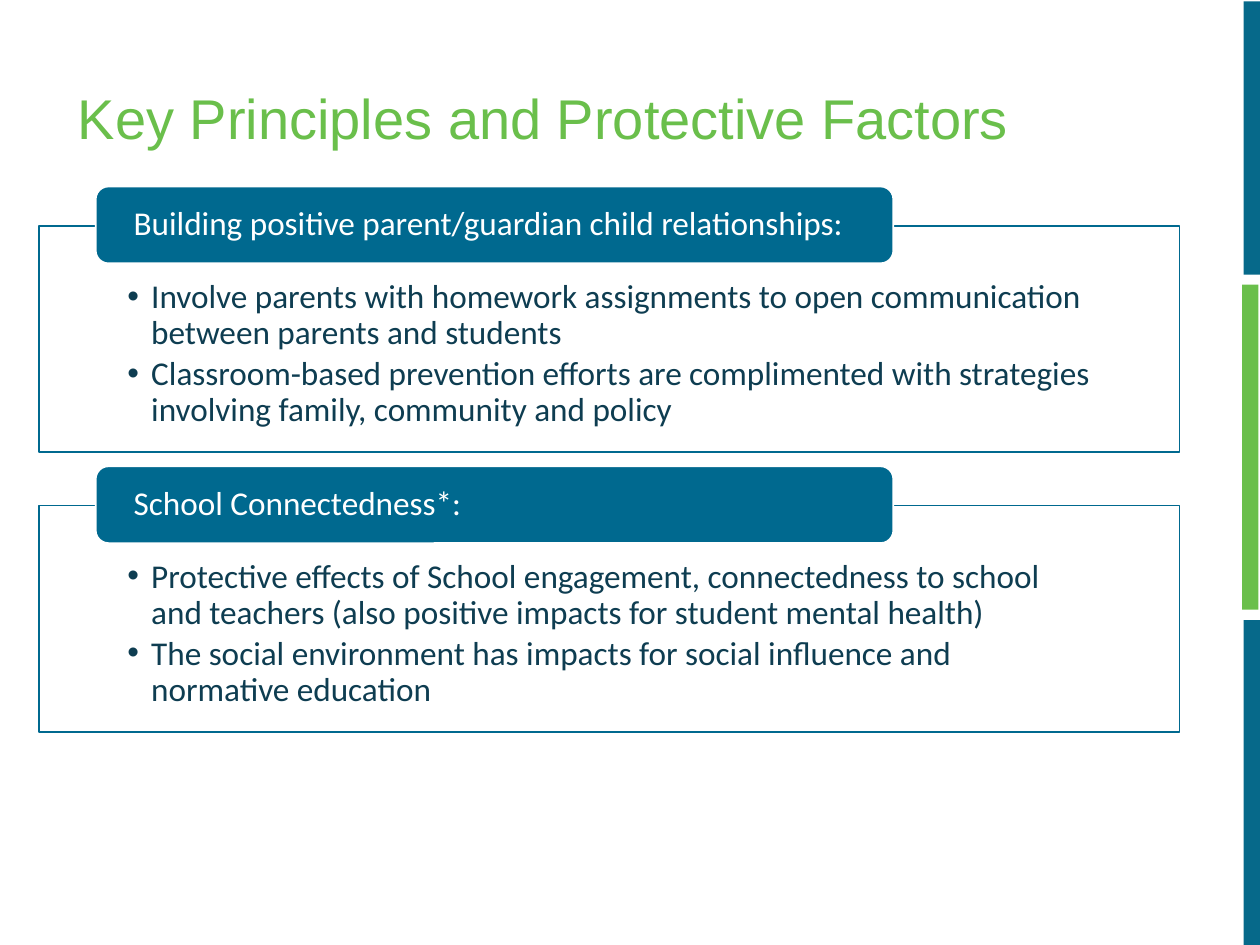
from dataclasses import dataclass

from lxml.etree import SubElement
from pptx import Presentation
from pptx.dml.color import RGBColor
from pptx.enum.shapes import MSO_SHAPE
from pptx.enum.text import MSO_ANCHOR, PP_ALIGN
from pptx.oxml.ns import qn
from pptx.shapes.autoshape import Shape
from pptx.slide import Slide
from pptx.text.text import _Paragraph as Paragraph
from pptx.util import Cm, Pt

COLORS = {
    "bar_blue": "06698A",
    "green": "6ABF4B",
    "blue": "00698F",
    "ink": "0E3D51",
    "white": "FFFFFF",
}
PANEL_TOP = 4.55
PANEL_PITCH = 5.64
HEADER_RISE = 0.79
BULLET_INDENT = Cm(0.48)


@dataclass
class Frame:
    left: float
    top: float
    width: float
    height: float


@dataclass
class Bar:
    frame: Frame
    color: str


@dataclass
class Topic:
    heading: str
    points: list[str]


BARS = [
    Bar(Frame(25.07, 12.5, 0.33, 6.55), "bar_blue"),
    Bar(Frame(25.04, 5.74, 0.33, 6.55), "green"),
    Bar(Frame(25.07, 0.03, 0.33, 5.51), "bar_blue"),
]
TOPICS = [
    Topic(
        "Building positive parent/guardian child relationships:",
        [
            "Involve parents with homework assignments to open communication between parents and students",
            "Classroom-based prevention efforts are complimented with strategies involving family, community and policy",
        ],
    ),
    Topic(
        "School Connectedness*:",
        [
            "Protective effects of School engagement, connectedness to school and teachers (also positive impacts for student mental health)",
            "The social environment has impacts for social influence and normative education",
        ],
    ),
]


def color_of(name: str) -> RGBColor:
    return RGBColor.from_string(COLORS[name])


def lengths(frame: Frame) -> tuple[Cm, Cm, Cm, Cm]:
    return Cm(frame.left), Cm(frame.top), Cm(frame.width), Cm(frame.height)


def add_block(page: Slide, kind: MSO_SHAPE, frame: Frame, fill: str, line: str | None = None) -> Shape:
    block = page.shapes.add_shape(kind, *lengths(frame))
    block.shadow.inherit = False
    block.fill.solid()
    block.fill.fore_color.rgb = color_of(fill)
    if line:
        block.line.color.rgb = color_of(line)
        block.line.width = Pt(1)
    else:
        block.line.fill.background()
    return block


def set_insets(box: Shape, side: float, top: float, bottom: float) -> None:
    text_frame = box.text_frame
    text_frame.word_wrap = True
    text_frame.margin_left = text_frame.margin_right = Cm(side)
    text_frame.margin_top, text_frame.margin_bottom = Cm(top), Cm(bottom)


def format_paragraph(para: Paragraph, font: str, size: int, color: str) -> None:
    para.alignment = PP_ALIGN.LEFT
    para.line_spacing = 0.9
    for span in para.runs:
        span.font.name = font
        span.font.size = Pt(size)
        span.font.color.rgb = color_of(color)


def add_bullet(para: Paragraph) -> None:
    properties = para._p.get_or_add_pPr()
    properties.set("marL", str(BULLET_INDENT))
    properties.set("indent", str(-BULLET_INDENT))
    SubElement(properties, qn("a:buFont")).set("typeface", "Arial")
    SubElement(properties, qn("a:buChar")).set("char", "•")


def add_title(page: Slide, text: str) -> None:
    box = page.shapes.add_textbox(*lengths(Frame(1.32, 1.02, 22.99, 2.84)))
    set_insets(box, 0.25, 0.13, 0.13)
    box.text_frame.vertical_anchor = MSO_ANCHOR.MIDDLE
    box.text_frame.text = text
    format_paragraph(box.text_frame.paragraphs[0], "Arial", 32, "green")


def add_topic(page: Slide, topic: Topic, top: float) -> None:
    panel = add_block(page, MSO_SHAPE.RECTANGLE, Frame(0.79, top, 22.99, 4.57), "white", "blue")
    set_insets(panel, 1.78, 1.09, 0.38)
    panel.text_frame.vertical_anchor = MSO_ANCHOR.TOP
    panel.text_frame.text = "\n".join(topic.points)
    for para in panel.text_frame.paragraphs:
        add_bullet(para)
        format_paragraph(para, "Calibri", 19, "ink")
        para.space_after = Pt(3)

    header_frame = Frame(1.93, top - HEADER_RISE, 16.08, 1.55)
    header = add_block(page, MSO_SHAPE.ROUNDED_RECTANGLE, header_frame, "blue", "white")
    set_insets(header, 0.69, 0, 0)
    header.text_frame.vertical_anchor = MSO_ANCHOR.MIDDLE
    header.text_frame.text = topic.heading
    format_paragraph(header.text_frame.paragraphs[0], "Calibri", 19, "white")


def main() -> None:
    deck = Presentation()
    deck.slide_width, deck.slide_height = Cm(25.4), Cm(19.05)
    page = deck.slides.add_slide(deck.slide_layouts[6])
    for bar in BARS:
        add_block(page, MSO_SHAPE.RECTANGLE, bar.frame, bar.color)
    add_title(page, "Key Principles and Protective Factors")
    for index, topic in enumerate(TOPICS):
        add_topic(page, topic, PANEL_TOP + index * PANEL_PITCH)
    deck.save("out.pptx")


if __name__ == "__main__":
    main()
